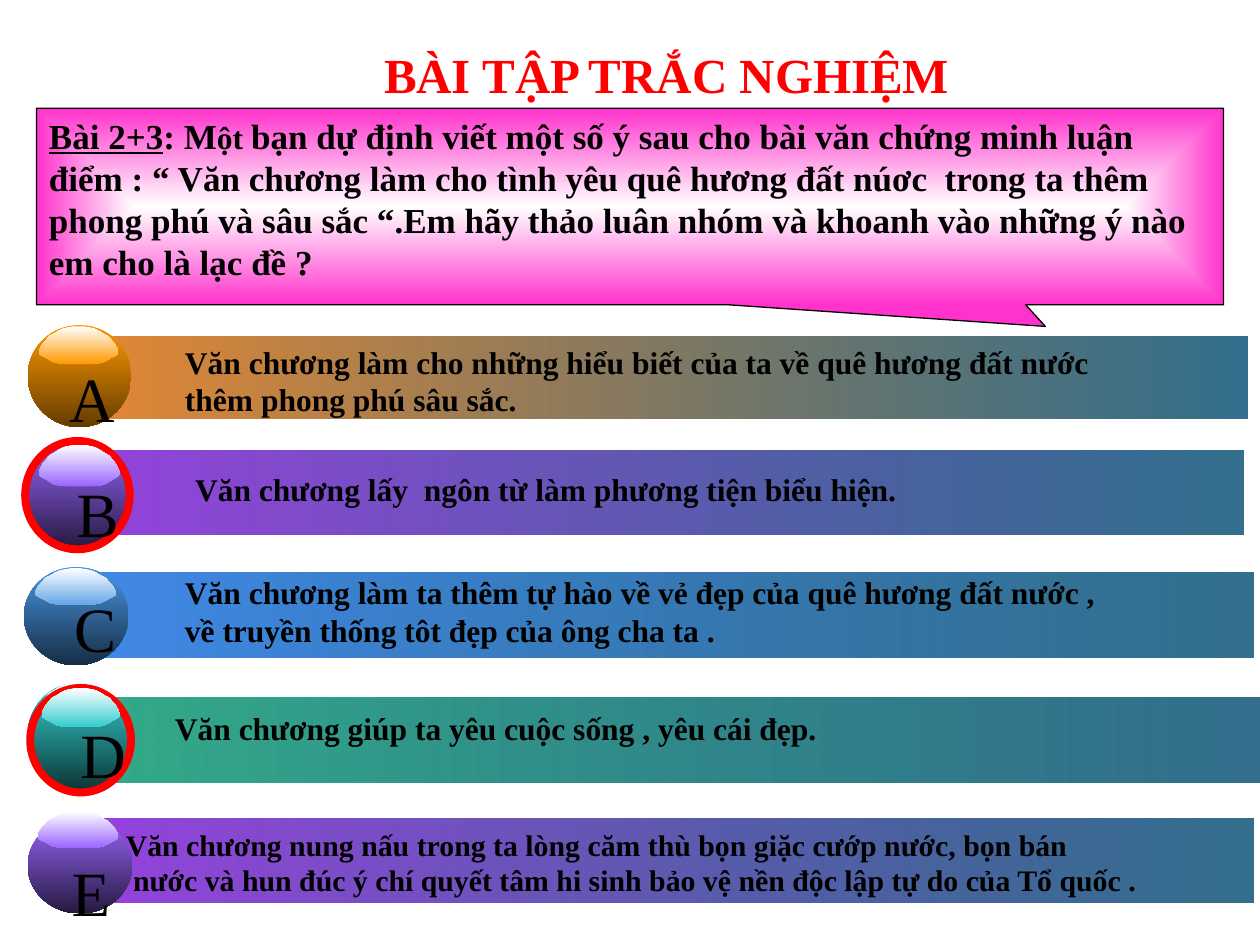
from dataclasses import dataclass

from lxml import etree
from pptx import Presentation
from pptx import util as u
from pptx.dml.color import RGBColor
from pptx.enum import shapes, text
from pptx.oxml import ns

FONT = "Times New Roman"
RING = "FF0000"
BAR_END = ("004B70", 80)
HALF_GLOSS = [
    (0, 0), (0.13, 0), (0.26, 0.03), (0.39, 0.06), (0.52, 0.13), (0.61, 0.19),
    (0.74, 0.26), (0.81, 0.35), (0.9, 0.45), (0.97, 0.58), (1, 0.68),
    (0.98, 0.74), (0.94, 0.77), (0.87, 0.81), (0.81, 0.84), (0.71, 0.9),
    (0.65, 0.94), (0.55, 0.97), (0.35, 1), (0.23, 1),
]
GLOSS = HALF_GLOSS + [(-x, y) for x, y in reversed(HALF_GLOSS)]

Box = tuple[float, float, float, float]


@dataclass
class Ball:
    box: Box
    gloss: Box
    top: str
    bottom: str
    shine: str
    ringed: bool = False


@dataclass
class Option:
    letter: str
    letter_box: Box
    bar: Box
    bar_color: str
    answer_box: Box
    answer: list[str]
    balls: list[Ball]
    size: int = 18


VIOLET = ("9966FF", "25193E", "9966FF")
TEAL = ("33CCCC", "0C3232", "33CCCC")

OPTIONS = [
    Option("A", (0.45, 2.75, 0.27, 0.41), (0.48, 2.67, 9.42, 0.65), "E98931",
           (1.37, 2.67, 7.43, 0.7),
           ["Văn chương làm cho những hiểu biết của ta về quê hương đất nước "
            "thêm phong phú sâu sắc."],
           [Ball((0.22, 2.58, 0.82, 0.81), (0.31, 2.59, 0.63, 0.3),
                 "FF9900", "643C00", "FF9900")]),
    Option("B", (0.51, 3.67, 0.22, 0.43), (0.47, 3.58, 9.4, 0.66), "9942E0",
           (1.45, 3.68, 6.69, 0.4),
           ["Văn chương lấy  ngôn từ làm phương tiện biểu hiện."],
           [Ball((0.19, 3.53, 0.83, 0.76), (0.28, 3.49, 0.64, 0.29), *VIOLET),
            Ball((0.2, 3.5, 0.83, 0.86), (0.31, 3.53, 0.64, 0.33), *VIOLET, True)]),
    Option("C", (0.49, 4.58, 0.26, 0.47), (0.45, 4.54, 9.5, 0.68), "418AEB",
           (1.37, 4.5, 8.63, 0.7),
           ["Văn chương làm ta thêm tự hào về vẻ đẹp của quê hương đất nước ,",
            "về truyền thống tôt đẹp của ông cha ta ."],
           [Ball((0.19, 4.5, 0.83, 0.78), (0.28, 4.51, 0.64, 0.29),
                 "4996E3", "162D45", "66A7E8")]),
    Option("D", (0.54, 5.58, 0.26, 0.43), (0.45, 5.54, 9.58, 0.67), "33AD8A",
           (1.29, 5.58, 6.69, 0.4),
           ["Văn chương giúp ta yêu cuộc sống , yêu cái đẹp."],
           [Ball((0.22, 5.42, 0.8, 0.83), (0.31, 5.42, 0.62, 0.31), *TEAL),
            Ball((0.24, 5.46, 0.8, 0.83), (0.33, 5.46, 0.62, 0.31), *TEAL, True)]),
    Option("E", (0.47, 6.67, 0.32, 0.39), (0.52, 6.5, 9.43, 0.66), "9942E0",
           (0.9, 6.51, 9.1, 0.67),
           ["Văn chương nung nấu trong ta lòng căm thù bọn giặc cướp nước, bọn bán",
            " nước và hun đúc ý chí quyết tâm hi sinh bảo vệ nền độc lập tự do của Tổ quốc ."],
           [Ball((0.22, 6.49, 0.83, 0.76), (0.3, 6.44, 0.64, 0.29), *VIOLET)], 17),
]


def rgb(color: str) -> RGBColor:
    return RGBColor.from_string(color)


def inches(box: Box) -> list[u.Length]:
    return [u.Inches(length) for length in box]


def fill_gradient(shape, start: tuple[str, int], end: tuple[str, int],
                  angle: int | None = 0) -> None:
    shape.fill.background()
    old = shape._element.spPr.find(ns.qn("a:noFill"))
    gradient = etree.Element(ns.qn("a:gradFill"), rotWithShape="1")
    stops = etree.SubElement(gradient, ns.qn("a:gsLst"))
    for position, (color, alpha) in ((0, start), (100000, end)):
        stop = etree.SubElement(stops, ns.qn("a:gs"), pos=str(position))
        srgb = etree.SubElement(stop, ns.qn("a:srgbClr"), val=color)
        if alpha < 100:
            etree.SubElement(srgb, ns.qn("a:alpha"), val=str(alpha * 1000))
    if angle is None:
        center = etree.SubElement(gradient, ns.qn("a:path"), path="rect")
        etree.SubElement(center, ns.qn("a:fillToRect"),
                         **{side: "50000" for side in "ltrb"})
    else:
        etree.SubElement(gradient, ns.qn("a:lin"), ang=str(angle * 60000), scaled="0")
    old.getparent().replace(old, gradient)


def set_line(shape, color: str | None = None, width: float = 0) -> None:
    shape.shadow.inherit = False
    if color is None:
        shape.line.fill.background()
    else:
        shape.line.color.rgb = rgb(color)
        shape.line.width = u.Pt(width)


def add_run(paragraph, words: str, size: float, color: str = "000000",
            bold: bool = True, underline: bool = False) -> None:
    run = paragraph.add_run()
    run.text = words
    font = run.font
    font.name, font.size, font.bold = FONT, u.Pt(size), bold
    font.underline = underline
    font.color.rgb = rgb(color)


def add_bar(slide, option: Option) -> None:
    bar = slide.shapes.add_shape(shapes.MSO_SHAPE.RECTANGLE, *inches(option.bar))
    set_line(bar)
    fill_gradient(bar, (option.bar_color, 100), BAR_END)


def add_answer(slide, option: Option) -> None:
    frame = slide.shapes.add_textbox(*inches(option.answer_box)).text_frame
    frame.word_wrap = True
    for index, line in enumerate(option.answer):
        paragraph = frame.add_paragraph() if index else frame.paragraphs[0]
        add_run(paragraph, line, option.size)


def add_ball(slide, ball: Ball) -> None:
    sphere = slide.shapes.add_shape(shapes.MSO_SHAPE.OVAL, *inches(ball.box))
    set_line(sphere, RING if ball.ringed else None, 4.5)
    fill_gradient(sphere, (ball.top, 100), (ball.bottom, 100), 90)

    left, top, width, height = ball.gloss
    points = [(u.Inches(left + width * (1 + x) / 2), u.Inches(top + height * y))
              for x, y in GLOSS]
    builder = slide.shapes.build_freeform(*points[0])
    builder.add_line_segments(points[1:], close=True)
    gloss = builder.convert_to_shape()
    set_line(gloss)
    fill_gradient(gloss, ("FFFFFF", 100), (ball.shine, 100), 90)


def add_letter(slide, option: Option) -> None:
    frame = slide.shapes.add_textbox(*inches(option.letter_box)).text_frame
    frame.word_wrap = False
    frame.margin_top = u.Inches(0.1)
    paragraph = frame.paragraphs[0]
    paragraph.alignment = text.PP_ALIGN.CENTER
    add_run(paragraph, option.letter, 36, bold=False)


def add_title(slide) -> None:
    title = slide.shapes.title
    title.left, title.top, title.width, title.height = inches((2.35, 0.25, 5.88, 0.6))
    frame = title.text_frame
    frame.auto_size = text.MSO_AUTO_SIZE.NONE
    frame.vertical_anchor = text.MSO_ANCHOR.TOP
    frame.margin_top = u.Inches(0.1)
    paragraph = frame.paragraphs[0]
    paragraph.alignment = text.PP_ALIGN.CENTER
    add_run(paragraph, "BÀI TẬP TRẮC NGHIỆM", 28, "FF0000")


def add_question(slide) -> None:
    question = slide.shapes.add_shape(
        shapes.MSO_SHAPE.RECTANGULAR_CALLOUT, *inches((0.29, 0.86, 9.42, 1.56)))
    question.adjustments[0], question.adjustments[1] = 0.35, 0.61
    set_line(question, "000000", 0.75)
    fill_gradient(question, ("FFFFFF", 100), ("FF33CC", 100), None)
    frame = question.text_frame
    frame.word_wrap = True
    frame.vertical_anchor = text.MSO_ANCHOR.TOP
    paragraph = frame.paragraphs[0]
    paragraph.alignment = text.PP_ALIGN.LEFT
    add_run(paragraph, "Bài 2+3", 20, underline=True)
    add_run(paragraph, ": M", 20)
    add_run(paragraph, "ột ", 18)
    add_run(paragraph, "bạn dự định viết một số ý sau cho bài văn chứng minh luận điểm : "
            "“ Văn chương làm cho tình yêu quê hương đất núơc  trong ta thêm phong phú "
            "và sâu sắc “.Em hãy thảo luân nhóm và khoanh vào những ý nào em cho là "
            "lạc đề ?", 20)


def main() -> None:
    deck = Presentation()
    deck.slide_width, deck.slide_height = u.Inches(10), u.Inches(7.5)
    slide = deck.slides.add_slide(deck.slide_layouts[5])
    add_title(slide)
    add_question(slide)
    for option in OPTIONS:
        add_bar(slide, option)
        add_answer(slide, option)
        for ball in option.balls:
            add_ball(slide, ball)
        add_letter(slide, option)
    deck.save("out.pptx")


if __name__ == "__main__":
    main()
